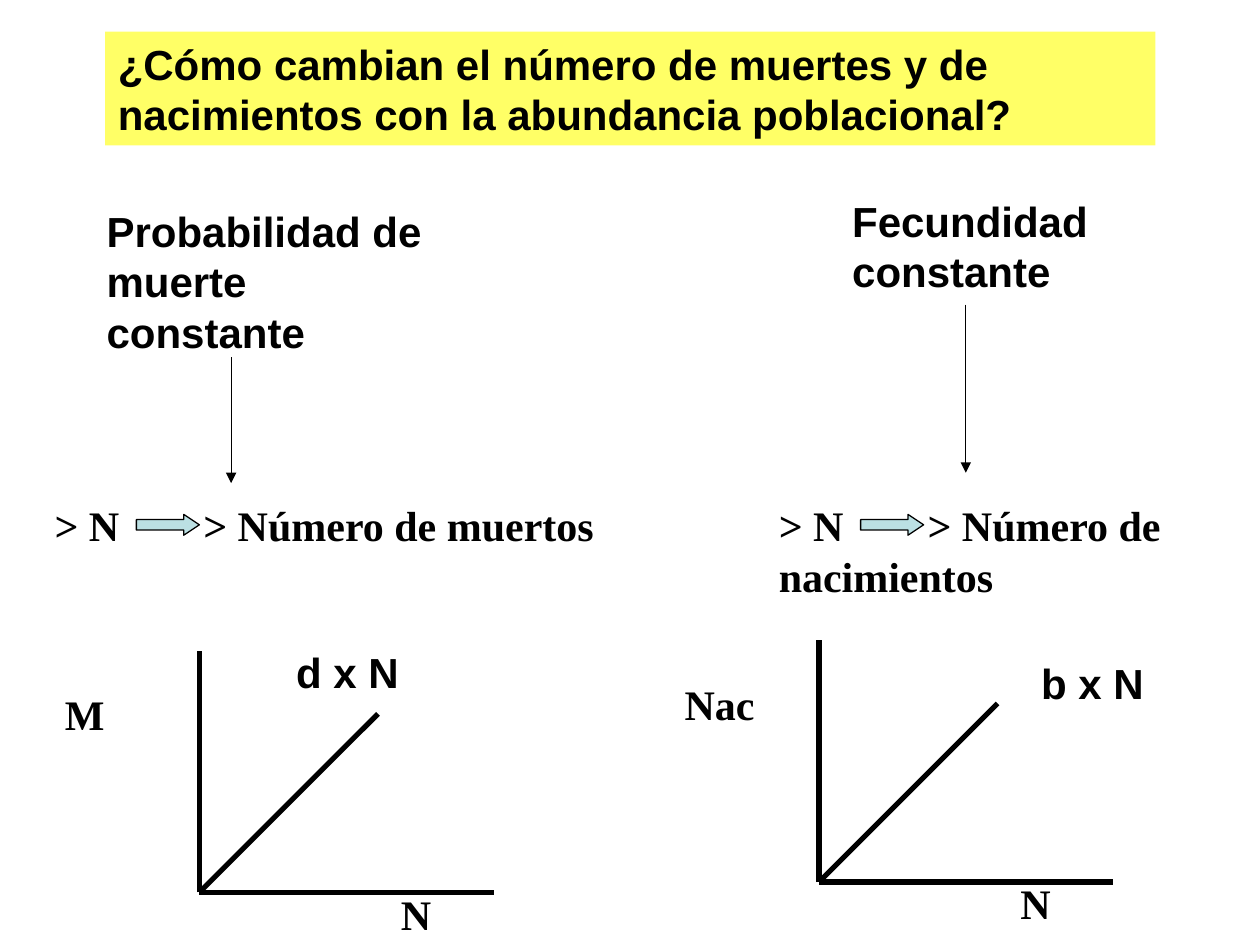
"""Build a slide on how deaths and births change with population abundance."""
from dataclasses import dataclass

from lxml import etree
from pptx import Presentation
from pptx.dml.color import RGBColor
from pptx.enum import shapes, text
from pptx.oxml import ns
from pptx.util import Cm, Pt

SANS, SERIF = "Arial", "Times New Roman"
BLACK, WHITE, YELLOW, PALE_BLUE = "000000", "FFFFFF", "FFFF66", "BBE0E3"


@dataclass
class Label:
    words: str
    left: float
    top: float
    width: float
    height: float = 1.27
    font: str = SANS
    fill: str | None = None


@dataclass
class Arrow:
    x: float
    top: float
    bottom: float


@dataclass
class Statement:
    outcome: str
    left: float
    width: float
    height: float


@dataclass
class Graph:
    y_name: str
    x: float
    y: float


TITLE = Label("¿Cómo cambian el número de muertes y de nacimientos con la abundancia poblacional?",
              2.12, 0.64, 21.17, 2.29, fill=YELLOW)
CAUSES = [
    Label("Probabilidad de muerte constante", 1.9, 4.02, 6.99, 3.3, fill=WHITE),
    Label("Fecundidad constante", 16.93, 3.81, 6.14, 2.29, fill=WHITE),
]
ARROWS = [Arrow(4.66, 7.2, 9.74), Arrow(19.47, 6.14, 9.53)]
STATEMENTS = [
    Statement("Número de muertos", 0.85, 11.43, 1.27),
    Statement("Número de nacimientos", 15.45, 8.26, 2.29),
]
GRAPHS = [Graph("M", 4.02, 17.99), Graph("Nac", 16.51, 17.78)]
FORMULAS = [Label("d x N", 5.72, 12.91, 3.18), Label("b x N", 20.74, 13.12, 3.18)]


def color(value: str) -> RGBColor:
    return RGBColor.from_string(value)


def format_label(shape, label: Label) -> None:
    shape.left, shape.top = Cm(label.left), Cm(label.top)
    shape.width, shape.height = Cm(label.width), Cm(label.height)
    if label.fill:
        shape.fill.solid()
        shape.fill.fore_color.rgb = color(label.fill)
    frame = shape.text_frame
    frame.text = label.words
    frame.word_wrap = True
    frame.auto_size = text.MSO_AUTO_SIZE.SHAPE_TO_FIT_TEXT
    frame.vertical_anchor = text.MSO_ANCHOR.TOP
    paragraph = frame.paragraphs[0]
    paragraph.alignment = text.PP_ALIGN.LEFT
    font = paragraph.font
    font.name, font.size, font.bold = label.font, Pt(24), True
    font.color.rgb = color(BLACK)


def add_label(container, label: Label):
    shape = container.add_textbox(0, 0, 0, 0)
    format_label(shape, label)
    return shape


def add_line(container, x1: float, y1: float, x2: float, y2: float, width: float):
    line = container.add_connector(shapes.MSO_CONNECTOR.STRAIGHT, Cm(x1), Cm(y1), Cm(x2), Cm(y2))
    line.line.color.rgb = color(BLACK)
    line.line.width = Pt(width)
    etree.SubElement(line._element.spPr, ns.qn("a:effectLst"))
    return line


def add_arrow(container, arrow: Arrow) -> None:
    line = add_line(container, arrow.x, arrow.top, arrow.x, arrow.bottom, 0.75)
    etree.SubElement(line.line._get_or_add_ln(), ns.qn("a:tailEnd"), type="triangle")


def add_statement(container, statement: Statement) -> None:
    top = 9.95
    shape = add_label(container, Label(f"> N\t> {statement.outcome}", statement.left, top,
                                       statement.width, statement.height, SERIF, WHITE))
    properties = shape.text_frame.paragraphs[0]._p.get_or_add_pPr()
    tabs = etree.Element(ns.qn("a:tabLst"))
    etree.SubElement(tabs, ns.qn("a:tab"), pos=str(Cm(3)), algn="l")
    properties.find(ns.qn("a:defRPr")).addprevious(tabs)

    block = container.add_shape(shapes.MSO_SHAPE.RIGHT_ARROW, Cm(statement.left + 1.9),
                                Cm(top + 0.42), Cm(1.27), Cm(0.42))
    block.adjustments[0], block.adjustments[1] = 0.5, 0.75
    block.shadow.inherit = False
    block.fill.solid()
    block.fill.fore_color.rgb = color(PALE_BLUE)
    block.line.color.rgb = color(BLACK)
    block.line.width = Pt(0.75)


def add_graph(container, graph: Graph) -> None:
    group = container.add_group_shape().shapes
    for run, rise in ((0, 4.87), (5.93, 0), (3.6, 3.6)):
        add_line(group, graph.x, graph.y, graph.x + run, graph.y - rise, 3)
    add_label(group, Label("N", graph.x + 3.81, graph.y - 0.21, 1.7, font=SERIF))
    add_label(group, Label(graph.y_name, graph.x - 2.96, graph.y - 4.23, 2.33, font=SERIF))


def main() -> None:
    presentation = Presentation()
    presentation.slide_width, presentation.slide_height = Cm(25.4), Cm(19.05)
    slide = presentation.slides.add_slide(presentation.slide_layouts[5])
    format_label(slide.shapes.title, TITLE)
    for label in CAUSES:
        add_label(slide.shapes, label)
    for arrow in ARROWS:
        add_arrow(slide.shapes, arrow)
    for statement in STATEMENTS:
        add_statement(slide.shapes, statement)
    for graph in GRAPHS:
        add_graph(slide.shapes, graph)
    for label in FORMULAS:
        add_label(slide.shapes, label)
    presentation.save("out.pptx")


if __name__ == "__main__":
    main()
